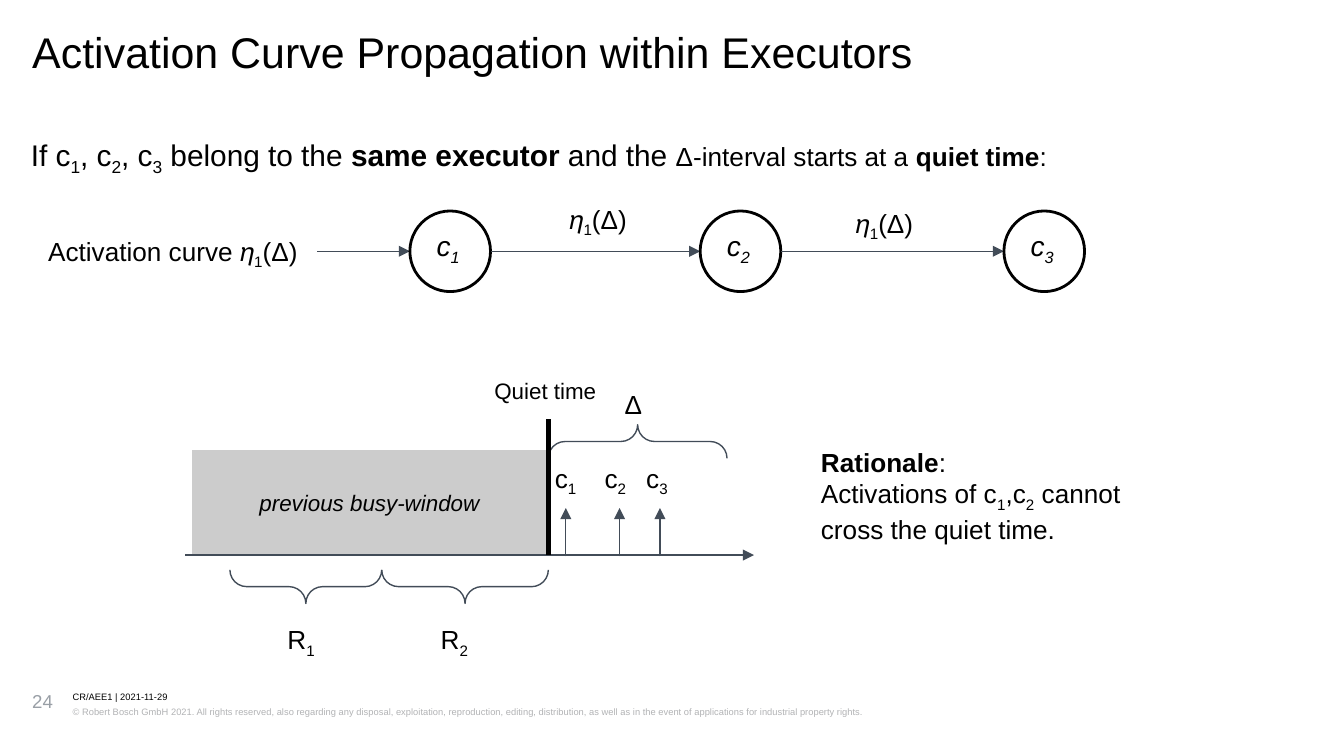
import pptx
import pptx.dml.color
import pptx.enum.shapes
import pptx.enum.text
import pptx.oxml
import pptx.oxml.ns
import pptx.util

PX = 9144
BLACK = pptx.dml.color.RGBColor(0x00, 0x00, 0x00)
SLATE = pptx.dml.color.RGBColor(0x42, 0x4C, 0x58)
SILVER = pptx.dml.color.RGBColor(0xCC, 0xCC, 0xCC)
PAGE_GREY = pptx.dml.color.RGBColor(0x99, 0x9F, 0xA6)
LEGAL_GREY = pptx.dml.color.RGBColor(0xB2, 0xB3, 0xB5)
MSO = pptx.enum.shapes.MSO_SHAPE
ETA = ["𝜂", ("1", "sub"), "(Δ)"]


def px(*lengths):
    """Turn px lengths into EMU."""
    return [pptx.util.Emu(int(n * PX)) for n in lengths]


def write(tf, paragraphs, size, color=BLACK, inset=10, spacing=None, italic=None, centred=False):
    """Fill a text frame; a part is plain text or a tuple of text and "sub", "b" or a size."""
    tf.word_wrap = True
    tf.margin_left, tf.margin_top, tf.margin_right, tf.margin_bottom = px(*[inset] * 4)
    tf.vertical_anchor = pptx.enum.text.MSO_ANCHOR.MIDDLE if centred else pptx.enum.text.MSO_ANCHOR.TOP
    for i, parts in enumerate(paragraphs):
        p = tf.add_paragraph() if i else tf.paragraphs[0]
        p.alignment = pptx.enum.text.PP_ALIGN.CENTER if centred else pptx.enum.text.PP_ALIGN.LEFT
        if spacing:
            p.line_spacing = spacing
        for part in parts:
            text, *styles = (part,) if isinstance(part, str) else part
            r = p.add_run()
            r.text = text
            r.font.name = "Arial"
            r.font.size = pptx.util.Pt(next((n for n in styles if n not in ("b", "sub")), size))
            r.font.color.rgb = color
            r.font.bold = "b" in styles
            r.font.italic = italic
            if "sub" in styles:
                r.font._element.set("baseline", "-25000")


def label(s, box, paragraphs, size, **style):
    """Add a text box."""
    write(s.shapes.add_textbox(*px(*box)).text_frame, paragraphs, size, **style)


def line(s, x1, y1, x2, y2, color=SLATE, width=0.75, arrow=True):
    """Add a straight line, with an arrowhead at its end by default."""
    c = s.shapes.add_connector(pptx.enum.shapes.MSO_CONNECTOR.STRAIGHT, *px(x1, y1, x2, y2))
    c.line.color.rgb = color
    c.line.width = pptx.util.Pt(width)
    if arrow:
        tail = pptx.oxml.parse_xml('<a:tailEnd %s type="triangle"/>' % pptx.oxml.ns.nsdecls("a"))
        c.line._get_or_add_ln().append(tail)
    c._element.spPr.append(pptx.oxml.parse_xml("<a:effectLst %s/>" % pptx.oxml.ns.nsdecls("a")))


def shape(s, kind, box, fill=None, color=None, width=0.75):
    """Add a preset shape without shadow."""
    sp = s.shapes.add_shape(kind, *px(*box))
    sp.shadow.inherit = False
    if fill is None:
        sp.fill.background()
    else:
        sp.fill.solid()
        sp.fill.fore_color.rgb = fill
    if color is None:
        sp.line.fill.background()
    else:
        sp.line.color.rgb = color
        sp.line.width = pptx.util.Pt(width)
    return sp


def brace(s, x, y, w, h, rotation):
    """Add a horizontal brace that covers the given box."""
    sp = shape(s, MSO.RIGHT_BRACE, (x + (w - h) / 2, y + (h - w) / 2, h, w), color=SLATE)
    sp.adjustments[0] = sp.adjustments[1] = 0.5
    sp.rotation = rotation


def header(s, x, y, w):
    """Place the title and the statement under it."""
    label(s, (x, y, w, 35), [["Activation Curve Propagation within Executors"]], 23, inset=0, spacing=0.89)
    statement = ["If c", ("1", "sub"), ", c", ("2", "sub"), ", c", ("3", "sub"), " belong to the ",
                 ("same executor", "b"), " and the ", ("Δ-interval starts at a ", 14),
                 ("quiet time", "b", 14), (":", 14)]
    label(s, (x - 1, y + 73, 828, 31), [statement], 16, inset=0, spacing=1.15)


def chain(s, x, y):
    """Place the row of callbacks joined by activation curves."""
    d = 60
    mid = y + d / 2
    label(s, (x, y + 8, 210, 44), [["Activation curve "] + ETA], 14)
    end = x + 210
    for i, left in enumerate((x + 279, x + 495, x + 721), 1):
        line(s, end, mid, left, mid)
        node = shape(s, MSO.OVAL, (left, y, d, d), color=BLACK, width=1.5)
        tf = node.text_frame
        write(tf, [["c", (str(i), "sub")]], 15, inset=4, italic=True, centred=True)
        tf.margin_right, tf.margin_bottom = px(7, 10)
        end = left + d
    label(s, (x + 388, y - 16, 109, 44), [ETA], 14)
    label(s, (x + 601, y - 13, 151, 44), [ETA], 14)


def timeline(s, x, y, w, h):
    """Place the busy window, the quiet time and the activations after it."""
    base = y + h
    quiet = x + 270
    window = shape(s, MSO.RECTANGLE, (x + 5, base - 78, 264, 78), fill=SILVER)
    write(window.text_frame, [["previous busy-window"]], 12, italic=True, centred=True)
    line(s, x, base, x + w, base)
    for i, (arrow, text) in enumerate(((283, 265), (323, 302), (353, 333)), 1):
        line(s, x + arrow, base + 1, x + arrow, base - 35)
        label(s, (x + text, base - 79, 51, 44), [["c", (str(i), "sub")]], 14)
    for i, (left, width, text) in enumerate(((33, 113, 66), (146, 124, 180)), 1):
        brace(s, x + left, base + 11, width, 25, 90)
        label(s, (x + text, base + 41, 56, 44), [["R", (str(i), "sub")]], 14)
    brace(s, quiet, base - 97, 133, 25, 270)
    label(s, (x + 317, base - 134, 443, 44), [["Δ"]], 14)
    line(s, quiet, y, quiet, base, BLACK, 3, arrow=False)
    label(s, (quiet - 50, y - 41, 124, 40), [["Quiet time"]], 12)


def rationale(s, x, y, w, h):
    """Place the explanation beside the timeline."""
    reason = ["Activations of c", ("1", "sub"), ",c", ("2", "sub"), " cannot cross the quiet time."]
    label(s, (x, y, w, h), [[("Rationale", "b"), ":"], reason], 14)


def footer(s, x, y):
    """Place the page number, the date line and the legal line."""
    label(s, (x, y, 26, 37), [["24"]], 10, color=PAGE_GREY, inset=0)
    label(s, (x + 30, y + 1, 834, 10), [["CR/AEE1 | 2021-11-29"]], 5, inset=0, spacing=1.07)
    legal = ("© Robert Bosch GmbH 2021. All rights reserved, also regarding any disposal, exploitation, "
             "reproduction, editing, distribution, as well as in the event of applications for "
             "industrial property rights.")
    label(s, (x + 30, y + 11, 834, 20), [[legal]], 5, color=LEGAL_GREY, inset=0, spacing=1.2)


def main():
    """Build the slide and save it."""
    prs = pptx.Presentation()
    prs.slide_width = pptx.util.Inches(10)
    prs.slide_height = prs.slide_width * 9 // 16
    s = prs.slides.add_slide(prs.slide_layouts[6])
    header(s, 24, 24, 953)
    chain(s, 26, 157)
    timeline(s, 138, 312, 423, 101)
    rationale(s, 601, 322, 280, 91)
    footer(s, 24, 513)
    prs.save("out.pptx")


if __name__ == "__main__":
    main()
